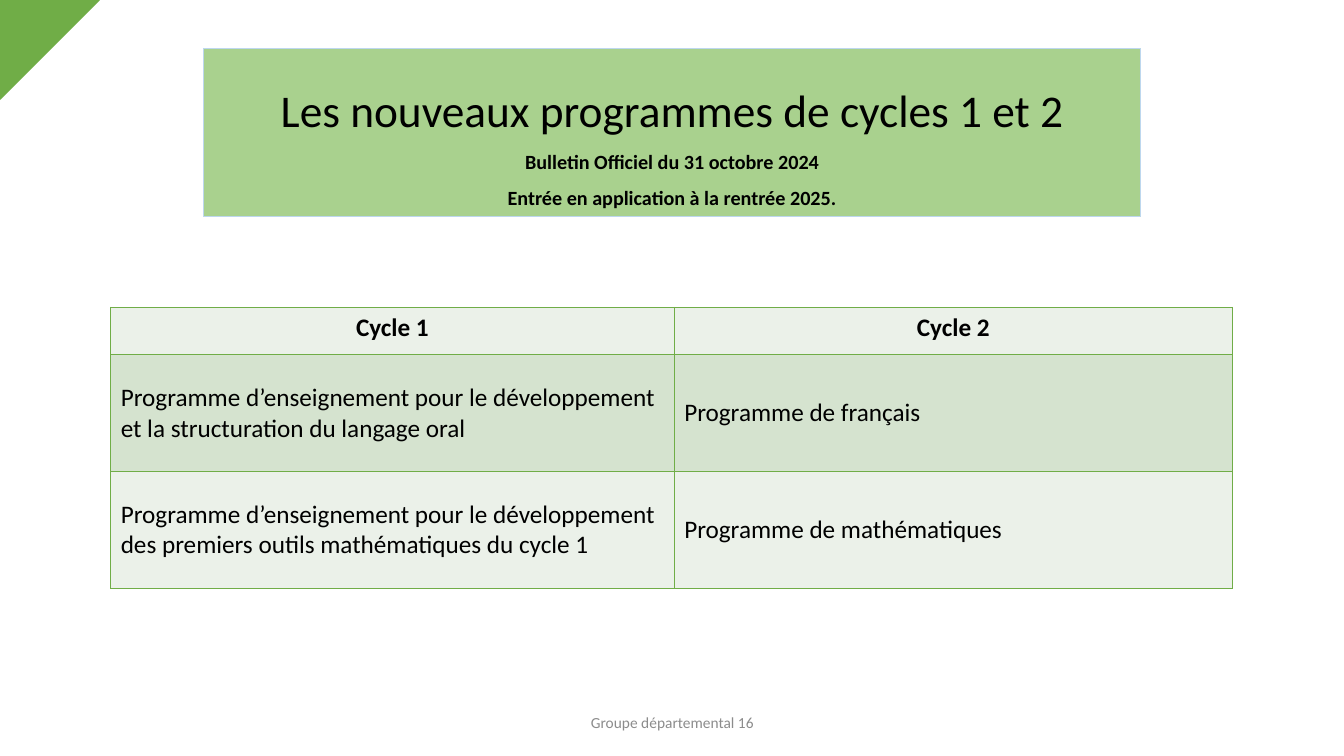
"""Builds the slide on the new programmes for cycles 1 and 2."""
from dataclasses import dataclass

from pptx import Presentation
from pptx.dml.color import RGBColor as Rgb
from pptx.enum.shapes import MSO_SHAPE as Kind
from pptx.enum.text import MSO_ANCHOR as Anchor, MSO_AUTO_SIZE as Fit, PP_ALIGN as Align
from pptx.oxml import parse_xml
from pptx.oxml.ns import nsdecls
from pptx.util import Cm, Pt


@dataclass(frozen=True)
class Theme:
    font: str = "Calibri"
    ink: str = "000000"
    grey: str = "8C8C8C"
    green: str = "70AD47"
    panel: str = "A9D18E"
    edge: str = "BDD7EE"
    bands: tuple = ("EBF1E9", "D5E3CF")
    title: float = 32.4
    sub: float = 14.4
    body: float = 18
    foot: float = 11


class Board:
    def __init__(self, slide, theme):
        self.slide = slide
        self.theme = theme

    def style(self, para, size, color, bold=False, align=Align.LEFT):
        para.alignment = align
        for run in para.runs:
            font = run.font
            font.name, font.size, font.bold = self.theme.font, Pt(size), bold
            font.color.rgb = Rgb.from_string(color)

    def paint(self, shape, fill, line, width):
        shape.fill.solid()
        shape.fill.fore_color.rgb = Rgb.from_string(fill)
        shape.line.color.rgb = Rgb.from_string(line)
        shape.line.width = Pt(width)

    def title(self, box, head, subs):
        look, shape = self.theme, self.slide.shapes.title
        shape.left, shape.top, shape.width, shape.height = map(Cm, box)
        self.paint(shape, look.panel, look.edge, 0.75)
        frame = shape.text_frame
        frame.text = "\n".join([head, *subs])
        frame.auto_size = Fit.NONE
        frame.vertical_anchor = Anchor.MIDDLE
        for i, para in enumerate(frame.paragraphs):
            para.line_spacing = 1.5
            para.space_before = Pt(0)
            size = look.sub if i else look.title
            self.style(para, size, look.ink, i > 0, Align.CENTER)

    def border(self, cell):
        props = cell._tc.get_or_add_tcPr()
        for i, side in enumerate("LRTB"):
            props.insert(i, parse_xml(
                f'<a:ln{side} {nsdecls("a")} w="{Pt(1)}"><a:solidFill>'
                f'<a:srgbClr val="{self.theme.green}"/></a:solidFill></a:ln{side}>'))

    def table(self, left, top, cols, rows, data):
        look = self.theme
        grid = self.slide.shapes.add_table(
            len(rows), len(cols), Cm(left), Cm(top), Cm(sum(cols)), Cm(sum(rows))).table
        for col, width in zip(grid.columns, cols):
            col.width = Cm(width)
        for r, (row, height) in enumerate(zip(grid.rows, rows)):
            row.height = Cm(height)
            for cell, text in zip(row.cells, data[r]):
                cell.text_frame.text = text
                cell.vertical_anchor = Anchor.MIDDLE if r else Anchor.TOP
                cell.fill.solid()
                cell.fill.fore_color.rgb = Rgb.from_string(look.bands[r % 2])
                self.border(cell)
                self.style(cell.text_frame.paragraphs[0], look.body, look.ink,
                           r == 0, Align.LEFT if r else Align.CENTER)

    def corner(self, side):
        shape = self.slide.shapes.add_shape(
            Kind.RIGHT_TRIANGLE, 0, 0, Cm(side), Cm(side))
        shape.rotation = 90
        shape.shadow.inherit = False
        self.paint(shape, self.theme.green, self.theme.green, 1)

    def footer(self, box, text):
        frame = self.slide.shapes.add_textbox(*map(Cm, box)).text_frame
        frame.word_wrap = True
        frame.vertical_anchor = Anchor.MIDDLE
        frame.text = text
        self.style(frame.paragraphs[0], self.theme.foot, self.theme.grey,
                   align=Align.CENTER)


def main():
    deck = Presentation()
    deck.slide_width, deck.slide_height = Cm(33.87), Cm(19.05)
    board = Board(deck.slides.add_slide(deck.slide_layouts[5]), Theme())
    board.title((5.13, 1.22, 23.62, 4.24), "Les nouveaux programmes de cycles 1 et 2",
                ["Bulletin Officiel du 31 octobre 2024",
                 "Entrée en application à la rentrée 2025."])
    lead = "Programme d’enseignement pour le développement "
    board.table(2.79, 7.75, (14.2, 14.07), (1.19, 2.94, 2.94), [
        ("Cycle 1", "Cycle 2"),
        (lead + "et la structuration du langage oral", "Programme de français"),
        (lead + "des premiers outils mathématiques du cycle 1",
         "Programme de mathématiques"),
    ])
    board.corner(2.5)
    board.footer((13.16, 17.83, 7.57, 0.74), "Groupe départemental 16")
    deck.save("out.pptx")


if __name__ == "__main__":
    main()
